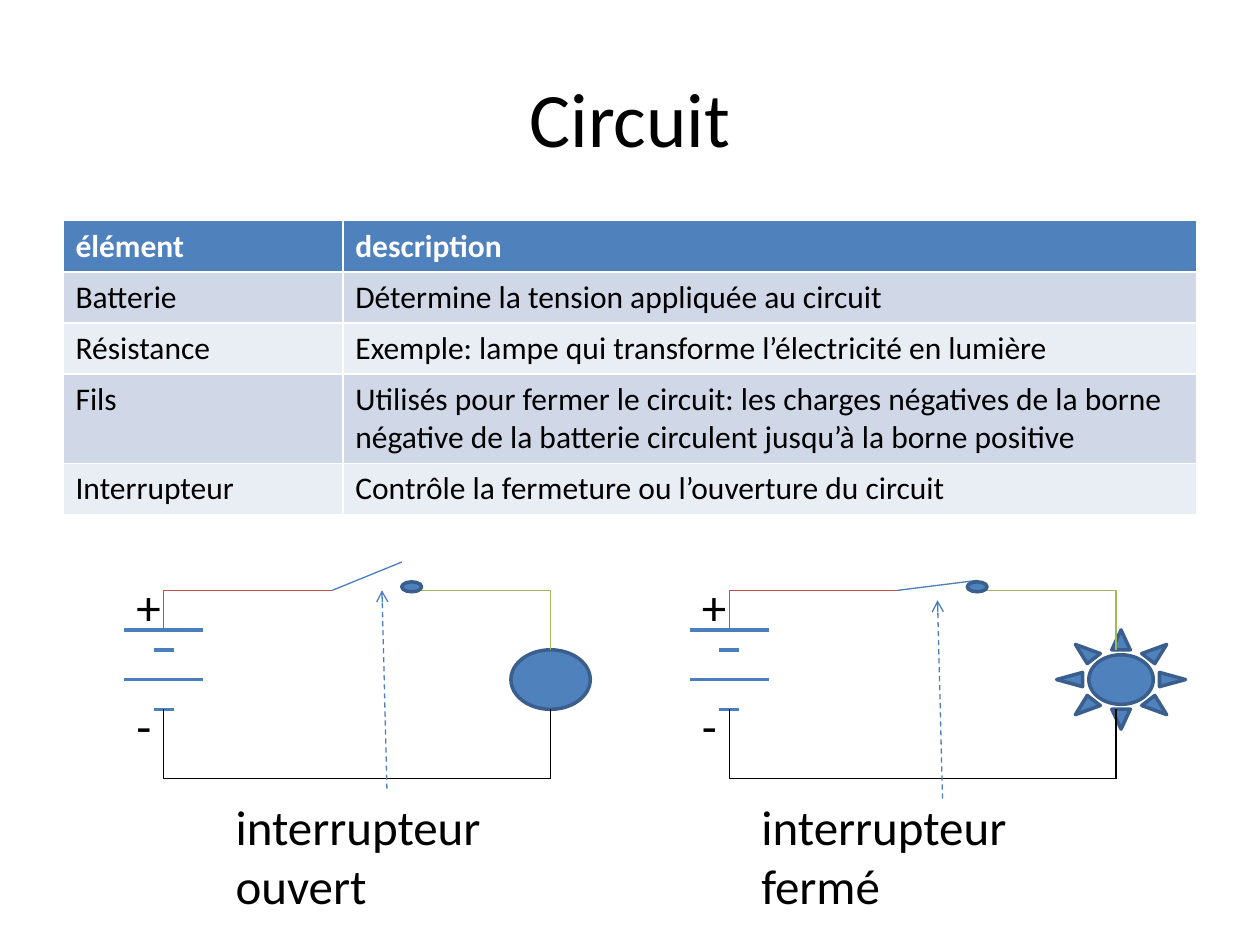
"""Build a slide on circuits: a table of elements above an open and a closed circuit."""
from lxml import etree
from pptx import Presentation
from pptx import util as u
from pptx.dml.color import RGBColor
from pptx.enum import dml, shapes, text
from pptx.oxml.ns import qn

THEME = {
    "font": "Calibri",
    "title": 44, "label": 28, "cell": 18,
    "thin": 0.75, "thick": 2,
    "black": "000000", "white": "FFFFFF",
    "fill": "4F81BD", "outline": "3A5F8C", "stroke": "4B7EBC",
    "red": "C0504D", "green": "9BBB59",
    "bands": ("E9EDF4", "D0D8E8"),
}
TITLE = "Circuit"
ROWS = [
    ("élément", "description"),
    ("Batterie", "Détermine la tension appliquée au circuit"),
    ("Résistance", "Exemple: lampe qui transforme l’électricité en lumière"),
    ("Fils", "Utilisés pour fermer le circuit: les charges négatives de la borne "
             "négative de la batterie circulent jusqu’à la borne positive"),
    ("Interrupteur", "Contrôle la fermeture ou l’ouverture du circuit"),
]
COLUMN_WIDTHS = (5.64, 17.22)
ROW_HEIGHT = 1.03
CIRCUITS = [
    {"left": 2.5, "lamp": shapes.MSO_SHAPE.OVAL, "lamp_box": (7.8, 13.1, 1.6, 1.2),
     "blade_end": (5.6, 11.33), "pointer": ((5.3, 15.9), (5.2, 11.9)),
     "label": "interrupteur ouvert", "label_left": 2},
    {"left": 13.9, "lamp": shapes.MSO_SHAPE.SUN, "lamp_box": (7.4, 12.7, 2.6, 2),
     "blade_end": (5.8, 11.7), "pointer": ((5.1, 16.1), (5, 12.1)),
     "label": "interrupteur fermé", "label_left": 1.2},
]
PLATES = [(12.7, 1.6), (13.1, 0.4), (13.7, 1.6), (14.3, 0.4)]
POLES = [("+", 11.5), ("-", 13.9)]
AXIS, HINGE, CONTACT, LAMP_X = 0.8, 4.2, 5.6, 8.6
TOP_WIRE, LAMP_TOP, BATTERY_TOP, BATTERY_BOTTOM, BOTTOM_WIRE = 11.9, 13.1, 12.7, 14.3, 15.7


def color(name):
    return RGBColor.from_string(THEME.get(name, name))


def style_font(para, size, name="black", bold=False):
    para.font.name = THEME["font"]
    para.font.size = u.Pt(THEME[size])
    para.font.bold = bold
    para.font.color.rgb = color(name)


def add_label(page, words, left, top, width, height):
    box = page.shapes.add_textbox(*map(u.Cm, (left, top, width, height)))
    box.text_frame.word_wrap = True
    box.text_frame.auto_size = text.MSO_AUTO_SIZE.SHAPE_TO_FIT_TEXT
    box.text_frame.text = words
    style_font(box.text_frame.paragraphs[0], "label")


def add_body(page, kind, left, top, width, height):
    body = page.shapes.add_shape(kind, *map(u.Cm, (left, top, width, height)))
    body.shadow.inherit = False
    body.fill.solid()
    body.fill.fore_color.rgb = color("fill")
    body.line.color.rgb = color("outline")
    body.line.width = u.Pt(THEME["thick"])


def add_wire(page, begin, end, name="stroke", weight="thin", bend=None, pointer=False):
    kind = shapes.MSO_CONNECTOR.ELBOW if bend else shapes.MSO_CONNECTOR.STRAIGHT
    wire = page.shapes.add_connector(kind, *map(u.Cm, begin + end))
    wire.line.color.rgb = color(name)
    wire.line.width = u.Pt(THEME[weight])
    properties = wire._element.spPr
    if bend:
        geometry = properties.find(qn("a:prstGeom"))
        geometry.set("prst", bend)
        if bend == "bentConnector3":
            guides = geometry.find(qn("a:avLst"))
            if guides is None:
                guides = etree.SubElement(geometry, qn("a:avLst"))
            etree.SubElement(guides, qn("a:gd"), name="adj1", fmla="val 0")
    if pointer:
        wire.line.dash_style = dml.MSO_LINE.DASH
        etree.SubElement(properties.find(qn("a:ln")), qn("a:tailEnd"), type="arrow")
    etree.SubElement(properties, qn("a:effectLst"))


def add_title(page):
    title = page.shapes.title
    title.left, title.top, title.width, title.height = map(u.Cm, (1.27, 0.76, 22.86, 3.18))
    title.text_frame.text = TITLE
    title.text_frame.vertical_anchor = text.MSO_ANCHOR.MIDDLE
    para = title.text_frame.paragraphs[0]
    para.alignment = text.PP_ALIGN.CENTER
    style_font(para, "title")


def add_elements_table(page):
    frame = page.shapes.add_table(
        len(ROWS), len(COLUMN_WIDTHS), u.Cm(1.27), u.Cm(4.45),
        u.Cm(sum(COLUMN_WIDTHS)), u.Cm(ROW_HEIGHT * len(ROWS)))
    table = frame.table
    for column, width in zip(table.columns, COLUMN_WIDTHS):
        column.width = u.Cm(width)
    for r, row in enumerate(ROWS):
        header = r == 0
        for c, words in enumerate(row):
            cell = table.cell(r, c)
            cell.text = words
            cell.fill.solid()
            cell.fill.fore_color.rgb = color("fill" if header else THEME["bands"][r % 2])
            style_font(cell.text_frame.paragraphs[0], "cell",
                       "white" if header else "black", header)


def add_circuit(page, circuit):
    left = circuit["left"]

    def at(x, y):
        return left + x, y

    x, y, width, height = circuit["lamp_box"]
    add_body(page, circuit["lamp"], left + x, y, width, height)
    for y, width in PLATES:
        add_wire(page, at(AXIS - width / 2, y), at(AXIS + width / 2, y), weight="thick")
    add_wire(page, at(AXIS, BATTERY_TOP), at(HINGE, TOP_WIRE), "red", bend="bentConnector3")
    add_wire(page, at(HINGE, TOP_WIRE), at(*circuit["blade_end"]))
    add_wire(page, at(CONTACT + 0.2, TOP_WIRE), at(LAMP_X, LAMP_TOP), "green",
             bend="bentConnector2")
    add_wire(page, at(AXIS, BATTERY_BOTTOM), at(LAMP_X, BOTTOM_WIRE), "black",
             bend="bentConnector3")
    add_wire(page, at(LAMP_X, BOTTOM_WIRE), at(LAMP_X, BATTERY_BOTTOM), "black")
    add_body(page, shapes.MSO_SHAPE.OVAL, left + CONTACT, 11.73, 0.4, 0.2)
    begin, end = circuit["pointer"]
    add_wire(page, at(*begin), at(*end), pointer=True)
    add_label(page, circuit["label"], left + circuit["label_left"], 15.93, 6.6, 2.65)
    for sign, y in POLES:
        add_label(page, sign, left, y, 2.4, 1.45)


def main():
    deck = Presentation()
    deck.slide_width, deck.slide_height = u.Cm(25.4), u.Cm(19.05)
    page = deck.slides.add_slide(deck.slide_layouts[5])
    add_title(page)
    add_elements_table(page)
    for circuit in CIRCUITS:
        add_circuit(page, circuit)
    deck.save("out.pptx")


if __name__ == "__main__":
    main()
